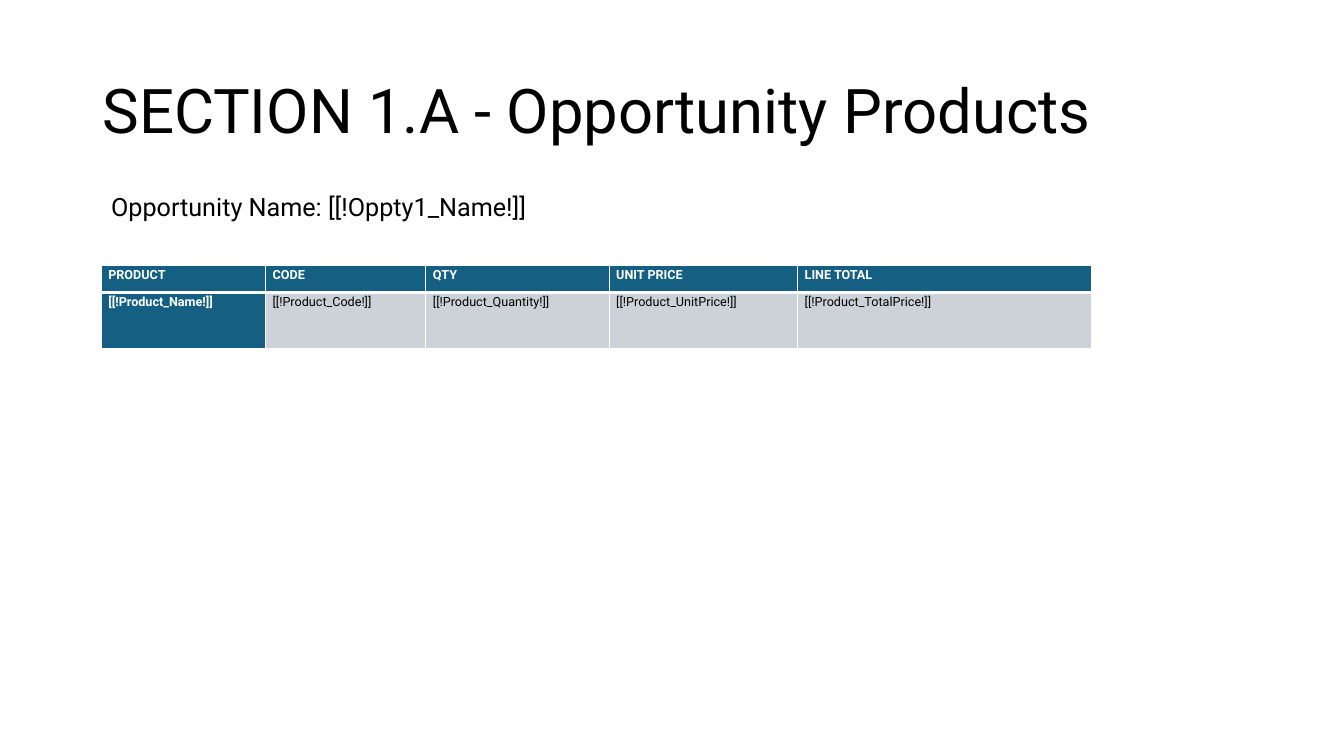
from dataclasses import dataclass

from lxml.etree import SubElement
from pptx import Presentation
from pptx.dml.color import RGBColor
from pptx.enum.text import MSO_ANCHOR, MSO_AUTO_SIZE, PP_ALIGN
from pptx.oxml.ns import qn
from pptx.util import Cm, Pt


@dataclass(frozen=True)
class Theme:
    font: str = "Roboto"
    ink: str = "000000"
    paper: str = "FFFFFF"
    accent: str = "156082"
    band: str = "CCD2D8"
    title_size: int = 44
    label_size: int = 18
    cell_size: int = 9


def write_text(frame, text, *, font, size, color, bold=False, line_spacing=None, space_after=None):
    para = frame.paragraphs[0]
    para.alignment = PP_ALIGN.LEFT
    para.line_spacing = line_spacing
    para.space_after = space_after
    span = para.add_run()
    span.text = text
    span.font.name = font
    span.font.size = Pt(size)
    span.font.bold = bold
    span.font.color.rgb = RGBColor.from_string(color)


def add_border(cell, side, color, width):
    line = SubElement(cell._tc.get_or_add_tcPr(), qn(f"a:ln{side}"), w=str(Pt(width)))
    fill = SubElement(line, qn("a:solidFill"))
    SubElement(fill, qn("a:srgbClr"), val=color)


class SlideBuilder:
    def __init__(self, page, theme):
        self.page = page
        self.theme = theme

    def title(self, text, left, top, width, height):
        box = self.page.shapes.title
        box.left, box.top, box.width, box.height = map(Cm, (left, top, width, height))
        box.text_frame.vertical_anchor = MSO_ANCHOR.MIDDLE
        box.text_frame.auto_size = MSO_AUTO_SIZE.NONE
        write_text(box.text_frame, text, font=self.theme.font, size=self.theme.title_size,
                   color=self.theme.ink, line_spacing=0.9)

    def label(self, text, left, top, width, height):
        box = self.page.shapes.add_textbox(*map(Cm, (left, top, width, height)))
        box.text_frame.word_wrap = True
        box.text_frame.auto_size = MSO_AUTO_SIZE.SHAPE_TO_FIT_TEXT
        write_text(box.text_frame, text, font=self.theme.font, size=self.theme.label_size,
                   color=self.theme.ink)

    def table(self, records, left, top, widths, heights):
        frame = self.page.shapes.add_table(
            len(records), len(widths), Cm(left), Cm(top), Cm(sum(widths)), Cm(sum(heights)))
        table = frame.table
        table.first_col = True
        for column, width in zip(table.columns, widths):
            column.width = Cm(width)
        for row, height in zip(table.rows, heights):
            row.height = Cm(height)
        for row_index, record in enumerate(records):
            for column_index, text in enumerate(record):
                self.cell(table.cell(row_index, column_index), text,
                          is_header=row_index == 0, is_strong=0 in (row_index, column_index))

    def cell(self, cell, text, *, is_header, is_strong):
        theme = self.theme
        cell.margin_left = cell.margin_right = Cm(0.18)
        cell.margin_top = cell.margin_bottom = 0
        top, bottom = (1, 3) if is_header else (3, 1)
        for side, width in {"L": 1, "R": 1, "T": top, "B": bottom}.items():
            add_border(cell, side, theme.paper, width)
        cell.fill.solid()
        cell.fill.fore_color.rgb = RGBColor.from_string(theme.accent if is_strong else theme.band)
        write_text(cell.text_frame, text, font=theme.font, size=theme.cell_size,
                   color=theme.paper if is_strong else theme.ink, bold=is_strong,
                   line_spacing=1.15, space_after=Pt(8))


def main():
    deck = Presentation()
    deck.slide_width, deck.slide_height = Cm(33.87), Cm(19.05)
    title_only = deck.slide_layouts[5]
    builder = SlideBuilder(deck.slides.add_slide(title_only), Theme())
    builder.title("SECTION 1.A - Opportunity Products", 2.33, 1.01, 29.21, 3.68)
    builder.table(
        [
            ["PRODUCT", "CODE", "QTY", "UNIT PRICE", "LINE TOTAL"],
            ["[[!Product_Name!]]", "[[!Product_Code!]]", "[[!Product_Quantity!]]",
             "[[!Product_UnitPrice!]]", "[[!Product_TotalPrice!]]"],
        ],
        left=2.55, top=6.68,
        widths=[4.14, 4.04, 4.62, 4.75, 7.42], heights=[0.69, 1.42],
    )
    builder.label("Opportunity Name: [[!Oppty1_Name!]]", 2.55, 4.7, 11.38, 1.03)
    deck.save("out.pptx")


if __name__ == "__main__":
    main()
